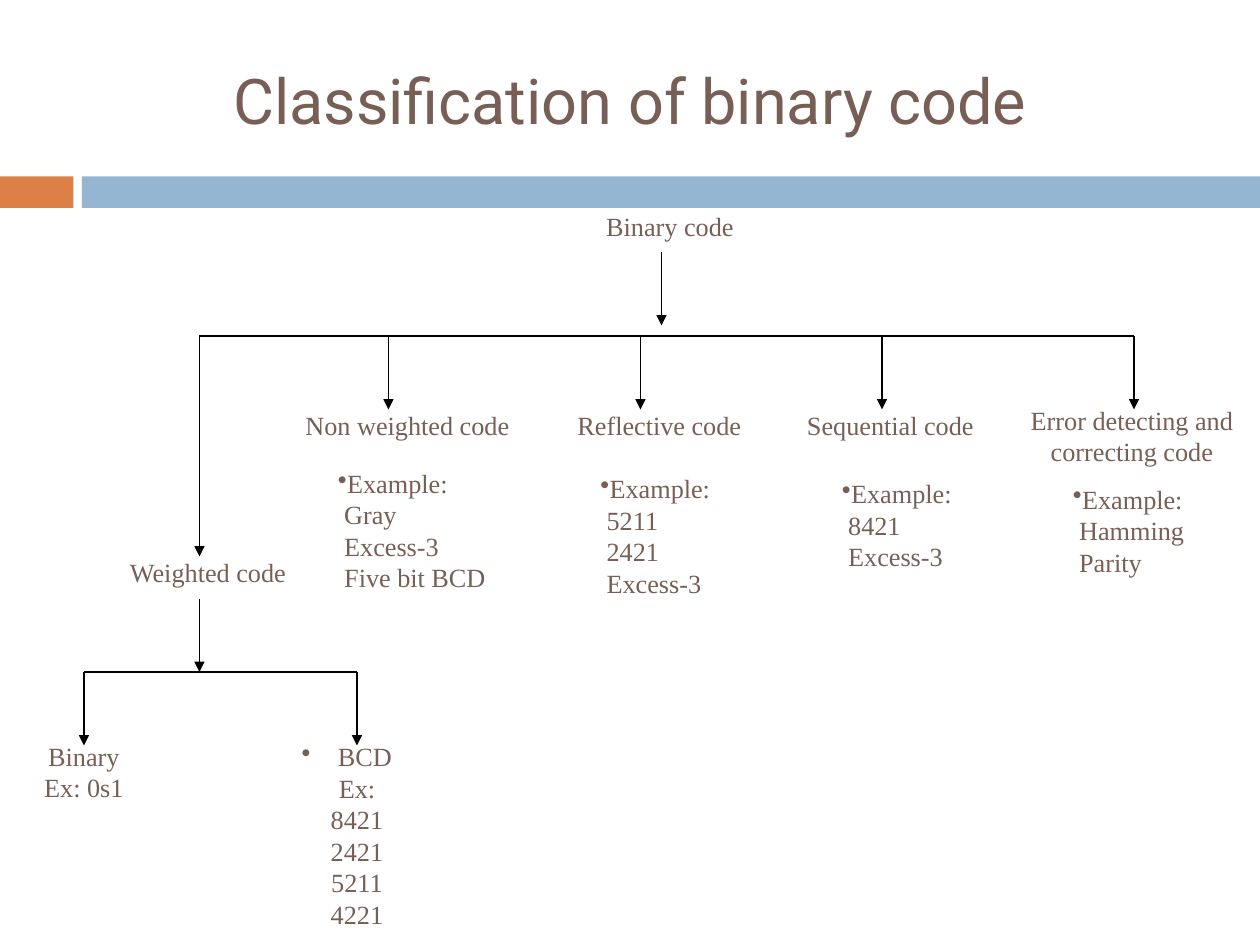
from lxml.etree import SubElement
from pptx import Presentation
from pptx.dml.color import RGBColor
from pptx.enum.shapes import MSO_CONNECTOR, MSO_SHAPE
from pptx.enum.text import MSO_ANCHOR, PP_ALIGN
from pptx.oxml.ns import qn
from pptx.util import Inches, Pt

COLS, ROWS = 120, 90
BROWN, BLACK, ORANGE, BLUE = "775F55", "000000", "DD8047", "94B6D2"
LINE_HEIGHT = 0.25

# text, box
LABELS = [
    ("Binary code", (51, 19, 25, 5)),
    ("Weighted code", (7, 52, 25, 5)),
    ("Non weighted code", (26, 38, 25, 5)),
    ("Reflective code", (50, 38, 25, 5)),
    ("Sequential code", (72, 38, 25, 5)),
    ("Error detecting and correcting code", (95, 39, 25, 5)),
]
# text, box, free lines below the text
EXAMPLES = [
    ("Example:\nGray\nExcess-3\nFive bit BCD", (31, 46, 18, 12), 1),
    ("Example:\n5211\n2421\nExcess-3", (56, 45, 18, 12), 0),
    ("Example:\n8421\nExcess-3", (79, 47, 18, 12), 2),
    ("Example:\nHamming\nParity", (101, 46, 18, 12), 1),
]


def rgb(color):
    return RGBColor.from_string(color)


def grid(*cells):
    """Turn grid cells into lengths; a cell is 1/120 of the slide's width."""
    return [Inches(cell * 10 / COLS) for cell in cells]


def set_font(p, name, size):
    p.font.name, p.font.size = name, Pt(size)
    p.font.color.rgb = rgb(BROWN)


def add_bar(slide, box, color):
    sp = slide.shapes.add_shape(MSO_SHAPE.RECTANGLE, *grid(*box))
    sp.shadow.inherit = False
    sp.fill.solid()
    sp.fill.fore_color.rgb = rgb(color)
    sp.line.fill.background()


def add_line(slide, start, end, arrow=True):
    line = slide.shapes.add_connector(MSO_CONNECTOR.STRAIGHT, *grid(*start, *end))
    line.line.color.rgb = rgb(BLACK)
    line.line.width = Pt(0.75)
    if arrow:
        SubElement(line.line._get_or_add_ln(), qn("a:tailEnd"), type="triangle")
    SubElement(line._element.spPr, qn("a:effectLst"))


def add_text(slide, text, box, align=PP_ALIGN.CENTER, bullet=False):
    tf = slide.shapes.add_textbox(*grid(*box)).text_frame
    tf.word_wrap = True
    tf.vertical_anchor = MSO_ANCHOR.MIDDLE
    p = tf.paragraphs[0]
    p.text = text
    p.alignment = align
    set_font(p, "Times New Roman", 15)
    if bullet:
        SubElement(p._p.get_or_add_pPr(), qn("a:buChar"), char="•")
    return tf


def add_heading(slide, box):
    title = slide.shapes.title
    title.left, title.top, title.width, title.height = grid(*box)
    tf = title.text_frame
    tf.vertical_anchor = MSO_ANCHOR.MIDDLE
    p = tf.paragraphs[0]
    p.text = "Classification of binary code"
    p.alignment = PP_ALIGN.CENTER
    set_font(p, "Roboto", 36)


def add_band(slide, box):
    left, top, width, height = box
    accent, gap = 7, 0.8
    add_bar(slide, (left, top, accent, height), ORANGE)
    add_bar(slide, (left + accent + gap, top, width - accent - gap, height), BLUE)


def add_label(slide, text, box):
    add_text(slide, text, box).margin_left = Inches(0.15)


def add_example(slide, text, box, free_lines):
    tf = add_text(slide, text, box, PP_ALIGN.LEFT, bullet=True)
    tf.margin_bottom = Inches(0.05 + free_lines * LINE_HEIGHT)
    pPr = tf.paragraphs[0]._p.get_or_add_pPr()
    hang = Inches(0.05)
    pPr.set("marL", str(hang))
    pPr.set("indent", str(-hang))


def add_fork(slide, stem, bar_y, tips):
    """Draw an arrow down to a bar, and an arrow from the bar to each tip."""
    add_line(slide, *stem)
    xs = [x for x, _ in tips]
    add_line(slide, (min(xs), bar_y), (max(xs), bar_y), arrow=False)
    for x, y in tips:
        add_line(slide, (x, bar_y), (x, y))


def add_tree(slide):
    add_fork(slide, ((63, 24), (63, 31)), 32,
             [(19, 53)] + [(x, 39) for x in (37, 61, 84, 108)])
    add_fork(slide, ((19, 57), (19, 64)), 64, [(8, 71), (34, 71)])
    for label in LABELS:
        add_label(slide, *label)
    for example in EXAMPLES:
        add_example(slide, *example)
    add_text(slide, "Binary\nEx: 0s1", (2, 71, 12, 5))
    add_text(slide, " BCD\nEx:\n8421\n2421\n5211\n4221", (25, 72, 18, 15), bullet=True)


def main():
    prs = Presentation()
    prs.slide_width, prs.slide_height = grid(COLS, ROWS)
    slide = prs.slides.add_slide(prs.slide_layouts[5])
    add_band(slide, (0, 16.8, COLS, 3))
    add_heading(slide, (6, 3, 108, 13))
    add_tree(slide)
    prs.save("out.pptx")


if __name__ == "__main__":
    main()
